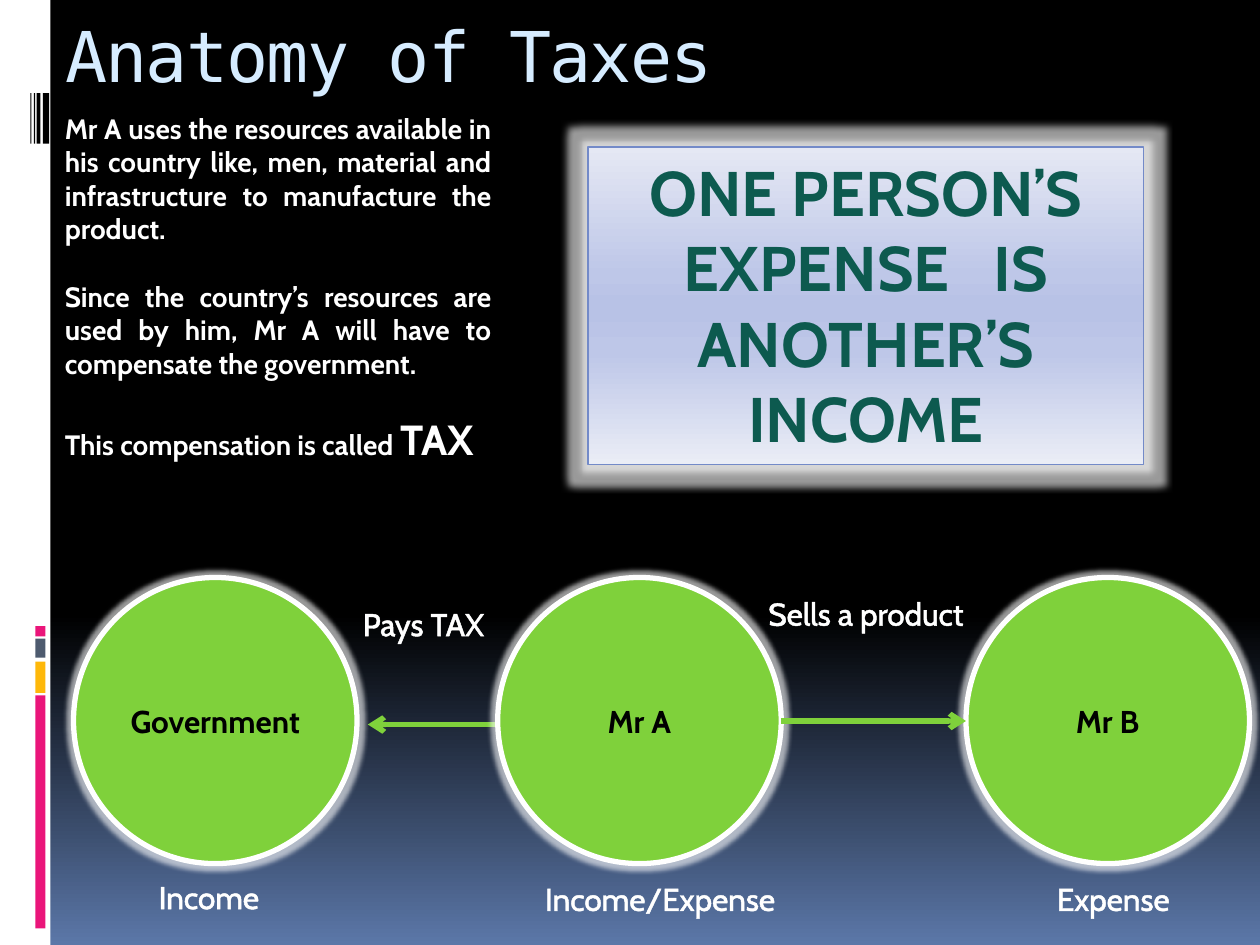
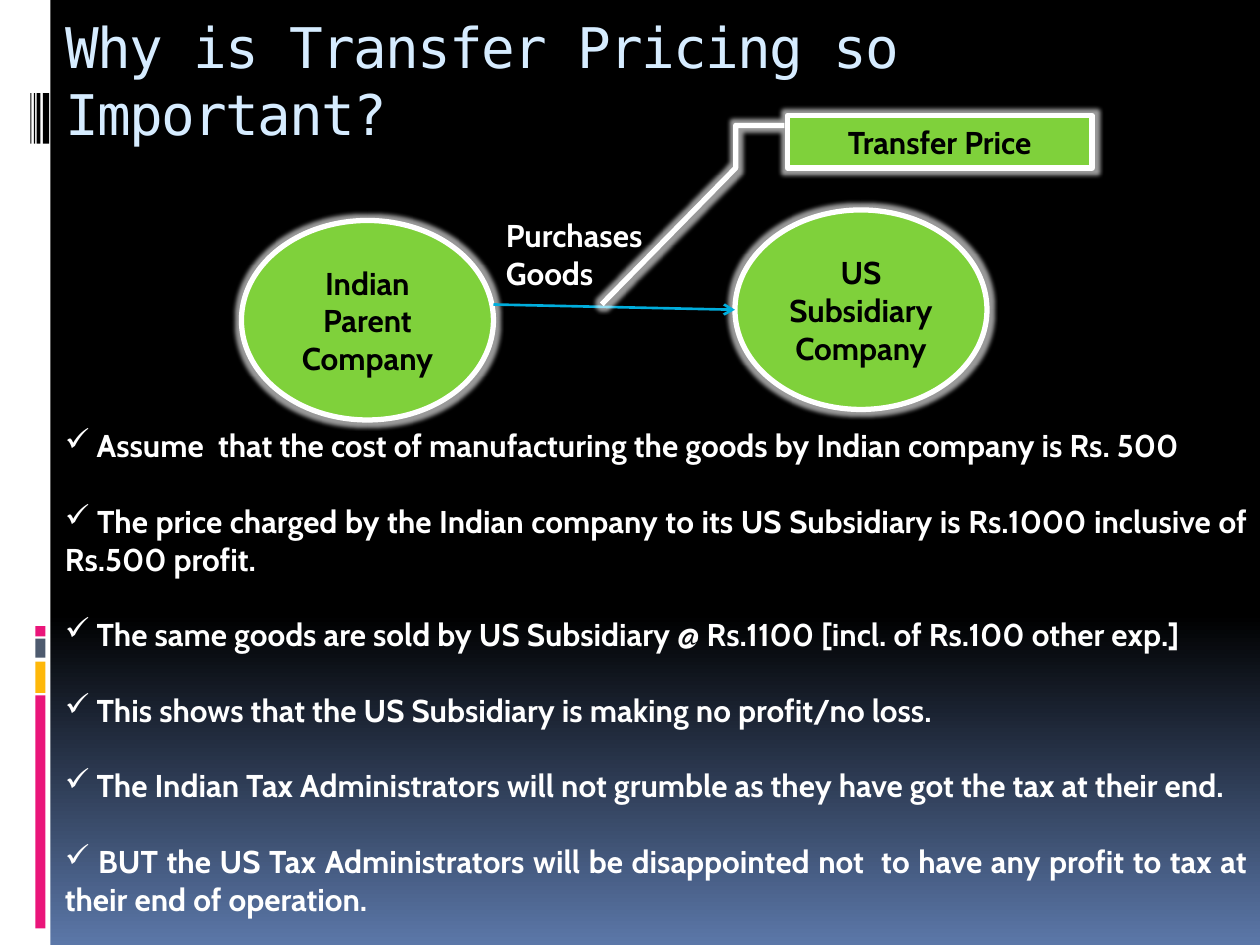
from dataclasses import dataclass

from lxml import etree
from pptx import Presentation
from pptx.dml.color import RGBColor
from pptx.enum.shapes import MSO_CONNECTOR, MSO_SHAPE
from pptx.enum.text import MSO_ANCHOR, MSO_AUTO_SIZE, PP_ALIGN
from pptx.oxml import parse_xml
from pptx.oxml.ns import nsdecls, qn
from pptx.util import Pt

RECTANGLE = MSO_SHAPE.RECTANGLE
CIRCLE = MSO_SHAPE.OVAL
COMPANY_OVAL = MSO_SHAPE.FLOWCHART_CONNECTOR
CALLOUT = MSO_SHAPE.LINE_CALLOUT_3
STRAIGHT = MSO_CONNECTOR.STRAIGHT
TOP, MIDDLE = MSO_ANCHOR.TOP, MSO_ANCHOR.MIDDLE
LEFT, CENTER, JUSTIFY = PP_ALIGN.LEFT, PP_ALIGN.CENTER, PP_ALIGN.JUSTIFY
NO_AUTOFIT = MSO_AUTO_SIZE.NONE
TITLE_ONLY = 5


@dataclass(frozen=True)
class Theme:
    body_font: str = "Cabin"
    title_font: str = "DejaVu Sans Mono"
    white: str = "FFFFFF"
    black: str = "000000"
    title: str = "D6ECFF"
    green: str = "7FD13B"
    cyan: str = "00ADDC"
    pink: str = "EA157A"
    amber: str = "FEB80A"
    slate: str = "4E5B6F"
    maxim_text: str = "0D5A4F"
    maxim_line: str = "738AC8"
    background: tuple = ((0, "000000"), (65, "000000"), (100, "5B77A8"))
    maxim_fill: tuple = ((0, "E5E8F4"), (40, "BEC7E8"), (50, "B8C2E6"),
                         (65, "BEC7E8"), (100, "EAEDF6"))
    large_title: int = 40
    small_title: int = 32
    maxim_size: int = 36
    emphasis_size: int = 24
    label_size: int = 18
    body_size: int = 16
    line_pitch: float = 1.2


@dataclass(frozen=True)
class Box:
    left: float
    top: float
    width: float
    height: float

    def region(self, left, top, width, height):
        """Return a box whose offset is measured from this one."""
        return Box(self.left + left, self.top + top, width, height)

    def lengths(self):
        return [Pt(value) for value in (self.left, self.top, self.width, self.height)]


THEME = Theme()
SLIDE = Box(0, 0, 720, 540)


def set_attributes(target, formats):
    for name, value in formats.items():
        setattr(target, name, value)


def color(value):
    return RGBColor.from_string(value)


def set_gradient(fill, element, stops):
    """Fill from top to bottom with (percent, colour) stops."""
    fill.gradient()
    fill.gradient_angle = 270
    stop_list = element.xpath(".//a:gsLst")[0]
    for stop in list(stop_list):
        stop_list.remove(stop)
    for percent, value in stops:
        stop = etree.SubElement(stop_list, qn("a:gs"), pos=str(percent * 1000))
        etree.SubElement(stop, qn("a:srgbClr"), val=value)


def add_glow(shape, radius):
    effects = shape.element.spPr.find(qn("a:effectLst"))
    effects.append(parse_xml(
        f'<a:glow {nsdecls("a")} rad="{Pt(radius)}"><a:srgbClr val="{THEME.white}">'
        '<a:alpha val="60000"/></a:srgbClr></a:glow>'))


def add_run(paragraph, text, size, text_color=THEME.white, bold=True,
            font=THEME.body_font, spacing=0, outline=0):
    run = paragraph.add_run()
    run.text = text
    set_attributes(run.font, {"name": font, "size": Pt(size), "bold": bold})
    run.font.color.rgb = color(text_color)
    properties = run.font._element
    if spacing:
        properties.set("spc", str(spacing * 100))
    if outline:
        properties.insert(0, parse_xml(
            f'<a:ln {nsdecls("a")} w="{Pt(outline)}"><a:solidFill>'
            f'<a:srgbClr val="{THEME.white}"/></a:solidFill></a:ln>'))


def add_text_box(slide, box, paragraphs, size, alignment=LEFT, gap=0, bullet=None, **run_format):
    """Each paragraph is a list of (text, size) runs or a plain string."""
    frame = slide.shapes.add_textbox(*box.lengths()).text_frame
    frame.word_wrap = True
    for index, content in enumerate(paragraphs):
        paragraph = frame.add_paragraph() if index else frame.paragraphs[0]
        if bullet:
            properties = paragraph._p.get_or_add_pPr()
            for name in ("marL", "indent"):
                properties.set(name, "0")
            etree.SubElement(properties, qn("a:buChar"), char=bullet)
        paragraph.alignment = alignment
        if index and gap:
            paragraph.space_before = Pt(gap)
        runs = [(content, size)] if isinstance(content, str) else content
        for text, run_size in runs:
            add_run(paragraph, text, run_size, **run_format)


def add_plain_shape(slide, kind, box, fill=None):
    shape = slide.shapes.add_shape(kind, *box.lengths())
    shape.shadow.inherit = False
    shape.line.fill.background()
    if fill:
        shape.fill.solid()
        shape.fill.fore_color.rgb = color(fill)
    return shape


def add_outline(shape, line_color, width):
    shape.line.color.rgb = color(line_color)
    shape.line.width = Pt(width)


def add_node(slide, kind, box, text):
    """Add a green, glowing shape with a centred name."""
    node = add_plain_shape(slide, kind, box, THEME.green)
    add_outline(node, THEME.white, 3)
    add_glow(node, 5)
    set_attributes(node.text_frame, {"word_wrap": True, "vertical_anchor": MIDDLE})
    paragraph = node.text_frame.paragraphs[0]
    paragraph.alignment = CENTER
    add_run(paragraph, text, THEME.label_size, THEME.black)
    return node


def add_arrow(slide, start, end, line_color, width):
    arrow = slide.shapes.add_connector(STRAIGHT, *[Pt(value) for value in (*start, *end)])
    add_outline(arrow, line_color, width)
    etree.SubElement(arrow.line._get_or_add_ln(), qn("a:tailEnd"), type="arrow")
    etree.SubElement(arrow._element.spPr, qn("a:effectLst"))


def decorate_layout(layout, slide, box):
    """Give the layout its background and side band, drawn by way of a slide."""
    set_gradient(layout.background.fill, layout.element, THEME.background)
    bars = [(0, 0, 28.8, box.height, THEME.white)]
    bars += [(20.2, top, 5.8, height, fill) for top, height, fill in (
        (397.4, 133.2, THEME.pink), (378, 18, THEME.amber),
        (365, 10.8, THEME.slate), (357.8, 5.8, THEME.pink))]
    bars += [(left, 53.3, width, 28.8, THEME.black) for left, width in (
        (24.5, 3.6), (20.9, 2.2), (19.4, 0.7), (17.3, 0.7))]
    for number, (left, top, width, height, fill) in enumerate(bars, start=100):
        bar = add_plain_shape(slide, RECTANGLE, box.region(left, top, width, height), fill)
        bar.element.nvSpPr.cNvPr.set("id", str(number))
        layout.shapes.element.append(bar.element)


def set_title(slide, box, text, size):
    title = slide.shapes.title
    set_attributes(title, dict(zip(("left", "top", "width", "height"), box.lengths())))
    set_attributes(title.text_frame, {"word_wrap": True, "auto_size": NO_AUTOFIT,
                                      "vertical_anchor": TOP, "margin_top": Pt(7.2)})
    paragraph = title.text_frame.paragraphs[0]
    paragraph.alignment = LEFT
    add_run(paragraph, text, size, THEME.title, False, THEME.title_font, spacing=-1)


def add_explanation(slide, box):
    size = THEME.body_size
    add_text_box(slide, box, [
        "Mr A uses the resources available in his country like, men, material and "
        "infrastructure to manufacture the product. ",
        "Since the country’s resources are used by him, Mr A will have to compensate "
        "the government.",
        [("This compensation is called ", size), ("TAX", THEME.emphasis_size)],
    ], size, JUSTIFY, gap=size * THEME.line_pitch)


def add_maxim(slide, box):
    panel = add_plain_shape(slide, RECTANGLE, box)
    set_gradient(panel.fill, panel.element, THEME.maxim_fill)
    add_outline(panel, THEME.maxim_line, 0.94)
    add_glow(panel, 8)
    set_attributes(panel.text_frame, {"word_wrap": True, "vertical_anchor": TOP})
    paragraph = panel.text_frame.paragraphs[0]
    paragraph.alignment = CENTER
    for text, spacing in (("ONE PERSON’S EXPENSE", 0), (" ", 17), ("IS ANOTHER’S INCOME", 0)):
        add_run(paragraph, text, THEME.maxim_size, THEME.maxim_text, spacing=spacing)


def add_money_flow(slide, box):
    """Show government, seller and buyer with the payments between them."""
    diameter, height = 162, 163.5
    add_arrow(slide, (box.left + 274, box.top + 84), (box.left + 168.2, box.top + 84),
              THEME.green, 3)
    for left, name in ((0, "Government"), (242.4, "Mr A"), (510, "Mr B")):
        add_node(slide, CIRCLE, box.region(left, 0, diameter, height), name)
    add_arrow(slide, (box.left + 404.4, box.top + 82), (box.left + 510, box.top + 82),
              THEME.green, 3)
    for text, left, top, width, alignment in (
            ("Pays TAX", 158.2, 12, 100, LEFT),
            ("Sells a product", 390, 6, 136, LEFT),
            ("Income", 24, 168, 106.6, CENTER),
            ("Income/Expense", 252, 169, 166.3, CENTER),
            ("Expense", 543.4, 169, 101.5, CENTER)):
        add_text_box(slide, box.region(left, top, width, 29), [text], THEME.label_size,
                     alignment, bold=False, outline=1.45)


def add_transfer_diagram(slide, box):
    """Show the sale from parent to subsidiary and point out its price."""
    for left, top, name in ((0, 60, "Indian Parent Company"),
                            (282, 54, "US Subsidiary Company")):
        add_node(slide, COMPANY_OVAL, box.region(left, top, 144, 114), name)
    add_arrow(slide, (box.left + 144, box.top + 108), (box.left + 282, box.top + 111),
              THEME.cyan, 1.5)
    add_text_box(slide, box.region(144, 54, 108, 51), ["Purchases Goods"], THEME.label_size)
    callout = add_node(slide, CALLOUT, box.region(312, 0, 174, 30), "Transfer Price")
    for index, value in enumerate((0.19, -0.01, 0.19, -0.17, 1, -0.17, 3.6, -0.61)):
        callout.adjustments[index] = value


def add_reasoning(slide, box):
    add_text_box(slide, box, [
        " Assume  that the cost of manufacturing the goods by Indian company is Rs. 500",
        " The price charged by the Indian company to its US Subsidiary is Rs.1000 "
        "inclusive of Rs.500 profit.",
        " The same goods are sold by US Subsidiary @ Rs.1100 [incl. of Rs.100 other exp.]",
        " This shows that the US Subsidiary is making no profit/no loss.",
        " The Indian Tax Administrators will not grumble as they have got the tax at "
        "their end.",
        " BUT the US Tax Administrators will be disappointed not  to have any profit to "
        "tax at their end of operation.",
    ], THEME.label_size, JUSTIFY, gap=THEME.label_size * THEME.line_pitch, bullet="✓")


def fill_taxes_slide(slide, box):
    set_title(slide, box.region(30, 0, 612, 72), "Anatomy of Taxes", THEME.large_title)
    add_explanation(slide, box.region(30, 60, 258, 211))
    add_maxim(slide, box.region(336, 84, 317.5, 181.4))
    add_money_flow(slide, box.region(42, 330, 672, 198))


def fill_transfer_pricing_slide(slide, box):
    set_title(slide, box.region(30, 0, 690, 72), "Why is Transfer Pricing so Important?",
              THEME.small_title)
    add_transfer_diagram(slide, box.region(138, 66, 486, 174))
    add_reasoning(slide, box.region(30, 240, 690, 291))


def main():
    presentation = Presentation()
    presentation.slide_width, presentation.slide_height = SLIDE.lengths()[2:]
    layout = presentation.slide_layouts[TITLE_ONLY]
    taxes, transfer_pricing = [presentation.slides.add_slide(layout) for _ in range(2)]
    decorate_layout(layout, taxes, SLIDE)
    fill_taxes_slide(taxes, SLIDE)
    fill_transfer_pricing_slide(transfer_pricing, SLIDE)
    presentation.save("out.pptx")


if __name__ == "__main__":
    main()
